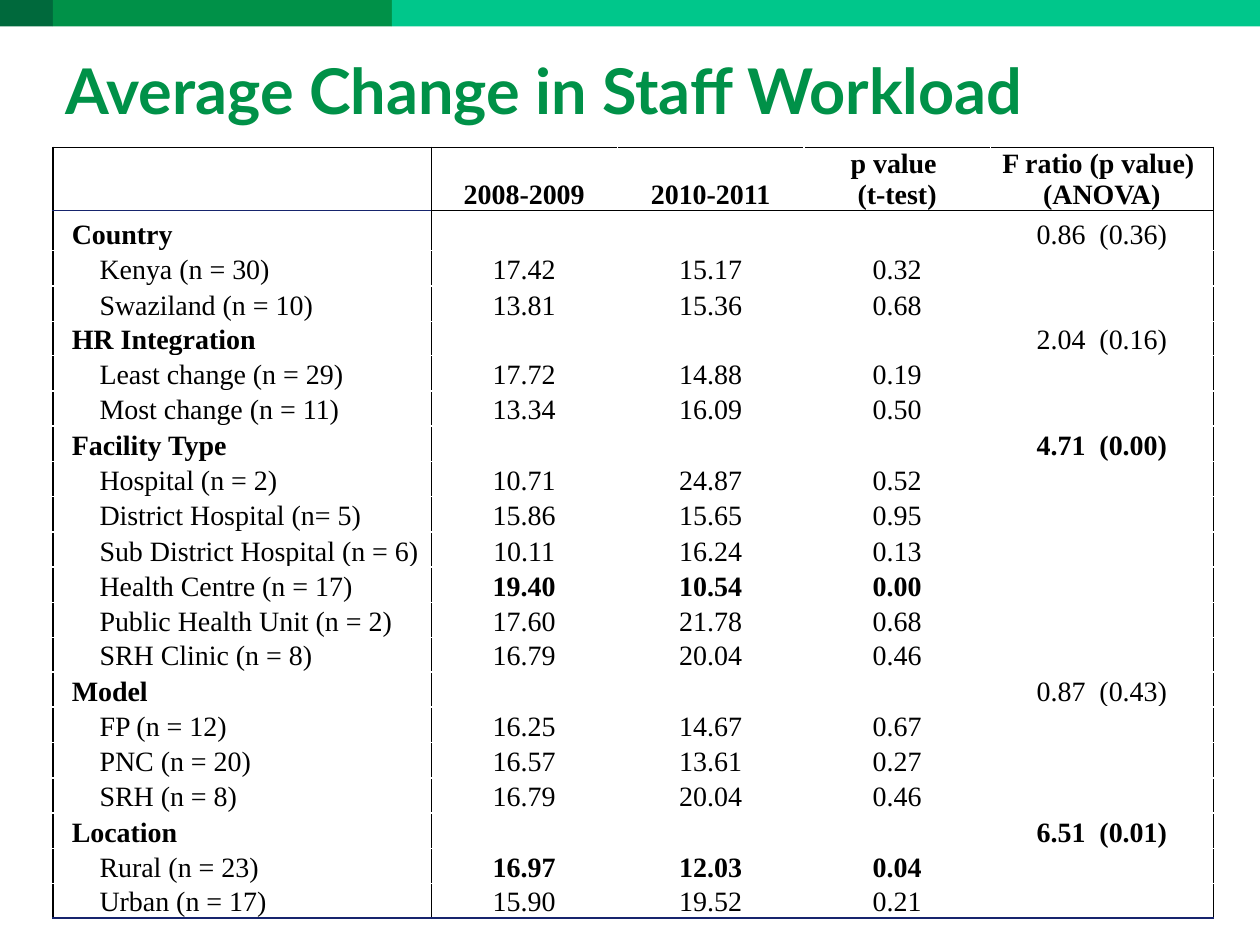
from lxml.etree import SubElement
from pptx import Presentation
from pptx.dml.color import RGBColor
from pptx.enum.shapes import MSO_SHAPE as SHAPE
from pptx.enum.text import MSO_ANCHOR as ANCHOR, PP_ALIGN as ALIGN
from pptx.oxml.ns import qn
from pptx.util import Inches, Pt

DARK_GREEN = RGBColor(0x00, 0x69, 0x3C)
GREEN = RGBColor(0x00, 0x91, 0x48)
MINT = RGBColor(0x00, 0xC7, 0x8B)
WHITE = RGBColor(0xFF, 0xFF, 0xFF)
BLACK = RGBColor(0x00, 0x00, 0x00)
NAVY = RGBColor(0x16, 0x24, 0x6D)

HEADERS = ["", "2008-2009", "2010-2011", "p value \n(t-test)", "F ratio (p value) \n(ANOVA)"]
GROUPS = [
    ("Country", "0.86  (0.36)", [
        ("Kenya (n = 30)", "17.42", "15.17", "0.32"),
        ("Swaziland (n = 10)", "13.81", "15.36", "0.68")]),
    ("HR Integration", "2.04  (0.16)", [
        ("Least change (n = 29)", "17.72", "14.88", "0.19"),
        ("Most change (n = 11)", "13.34", "16.09", "0.50")]),
    ("Facility Type", "4.71  (0.00)", [
        ("Hospital (n = 2)", "10.71", "24.87", "0.52"),
        ("District Hospital (n= 5)", "15.86", "15.65", "0.95"),
        ("Sub District Hospital (n = 6)", "10.11", "16.24", "0.13"),
        ("Health Centre (n = 17)", "19.40", "10.54", "0.00"),
        ("Public Health Unit (n = 2)", "17.60", "21.78", "0.68"),
        ("SRH Clinic (n = 8)", "16.79", "20.04", "0.46")]),
    ("Model", "0.87  (0.43)", [
        ("FP (n = 12)", "16.25", "14.67", "0.67"),
        ("PNC (n = 20)", "16.57", "13.61", "0.27"),
        ("SRH (n = 8)", "16.79", "20.04", "0.46")]),
    ("Location", "6.51  (0.01)", [
        ("Rural (n = 23)", "16.97", "12.03", "0.04"),
        ("Urban (n = 17)", "15.90", "19.52", "0.21")]),
]
SIGNIFICANT = {"Facility Type", "Health Centre (n = 17)", "Location", "Rural (n = 23)"}
ROW_HEIGHTS = {"": 0.5, "Country": 0.32, "HR Integration": 0.26,
               "SRH Clinic (n = 8)": 0.26, "Urban (n = 17)": 0.26}
COL_WIDTHS = [3, 1.48, 1.48, 1.48, 1.77]


def add_border(cell, side, color, width):
    ln = SubElement(cell._tc.get_or_add_tcPr(), qn(f"a:ln{side}"), w=str(Pt(width)))
    SubElement(SubElement(ln, qn("a:solidFill")), qn("a:srgbClr"), val=str(color))


def format_font(font, **values):
    font.color.rgb = values.pop("color")
    for name, value in values.items():
        setattr(font, name, value)


prs = Presentation()
prs.slide_width, prs.slide_height = Inches(10), Inches(7.5)
s = prs.slides.add_slide(prs.slide_layouts[5])

for left, width, color in [(0, 0.42, DARK_GREEN), (0.42, 2.69, GREEN), (3.11, 6.89, MINT)]:
    bar = s.shapes.add_shape(SHAPE.RECTANGLE, Inches(left), 0, Inches(width), Inches(0.21))
    bar.shadow.inherit = False
    bar.fill.solid()
    bar.fill.fore_color.rgb = color
    bar.line.fill.background()

title = s.shapes.title
title.left, title.top, title.width, title.height = map(Inches, (0.42, 0.36, 9.15, 1.39))
tf = title.text_frame
tf.text = "Average Change in Staff Workload"
tf.vertical_anchor = ANCHOR.TOP
p = tf.paragraphs[0]
p.alignment = ALIGN.LEFT
format_font(p.runs[0].font, name="Lato", size=Pt(36), bold=True, color=GREEN)

rows = [HEADERS]
for group, ratio, members in GROUPS:
    rows.append([group, "", "", "", ratio])
    rows += [[*member, ""] for member in members]
heights = [ROW_HEIGHTS.get(row[0], 0.28) for row in rows]
group_names = {group for group, _, _ in GROUPS}
last_row, last_col = len(rows) - 1, len(HEADERS) - 1

table = s.shapes.add_table(len(rows), len(HEADERS), Inches(0.42), Inches(1.17),
                           Inches(sum(COL_WIDTHS)), Inches(sum(heights))).table
table.first_row = table.horz_banding = False
for column, width in zip(table.columns, COL_WIDTHS):
    column.width = Inches(width)

for i, row in enumerate(rows):
    table.rows[i].height = Inches(heights[i])
    label = row[0]
    is_group = label in group_names
    for j, text in enumerate(row):
        cell = table.cell(i, j)
        divider = NAVY if j == 0 else BLACK
        divider_width = 1 if j == 0 else 0.5
        if j <= 1:
            add_border(cell, "L", BLACK, 1 if j == 0 else 0.5)
        if j in (0, last_col):
            add_border(cell, "R", BLACK, 0.5 if j == 0 else 1)
        if i == 0:
            add_border(cell, "T", BLACK, 1)
            add_border(cell, "B", divider, divider_width)
        elif i == 1:
            add_border(cell, "T", divider, divider_width)
        elif i == last_row:
            add_border(cell, "B", NAVY, 1)
        cell.fill.solid()
        cell.fill.fore_color.rgb = WHITE

        indent = 0.01 if j else 0.15 if is_group else 0.37
        cell.margin_left, cell.margin_right = Inches(indent), Inches(0.01)
        cell.margin_top = cell.margin_bottom = 0
        cell.vertical_anchor = ANCHOR.BOTTOM
        p = cell.text_frame.paragraphs[0]
        p.text = text
        p.alignment = ALIGN.CENTER if j else ALIGN.LEFT
        bold = i == 0 or (label in SIGNIFICANT if j else is_group)
        for r in p.runs:
            format_font(r.font, name="Times New Roman", size=Pt(16), bold=bold, color=BLACK)
        if not text:
            SubElement(p._p, qn("a:endParaRPr"), sz="1600")

prs.save("out.pptx")
